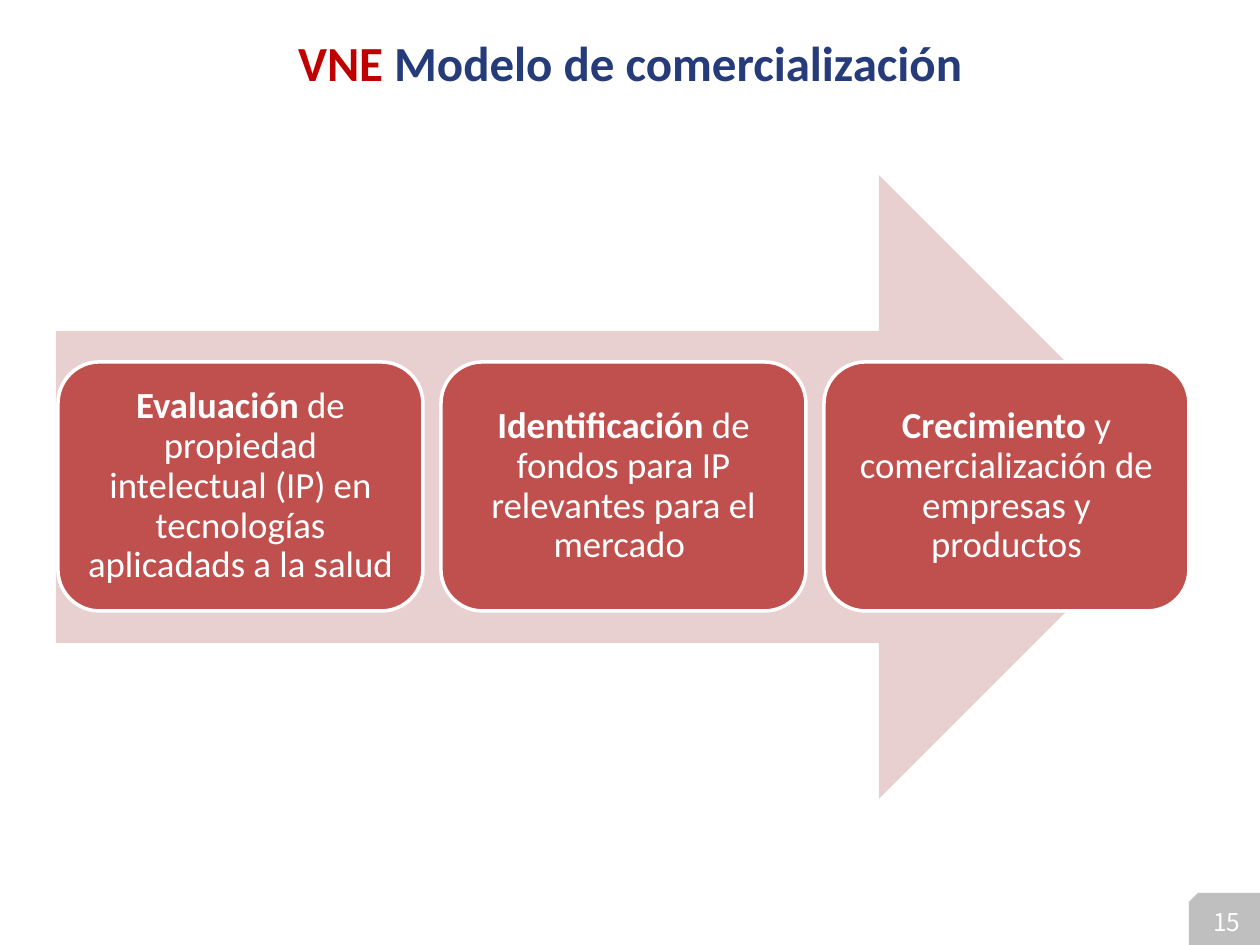
from pptx import Presentation
from pptx.dml.color import RGBColor
from pptx.enum.shapes import MSO_SHAPE
from pptx.enum.text import MSO_ANCHOR, PP_ALIGN
from pptx.util import Pt

ARROW = MSO_SHAPE.RIGHT_ARROW
ROUND = MSO_SHAPE.ROUNDED_RECTANGLE
SNIP = MSO_SHAPE.SNIP_1_RECTANGLE
CENTER = PP_ALIGN.CENTER
MIDDLE = MSO_ANCHOR.MIDDLE

WHITE = "FFFFFF"
STEPS = [
    ("Evaluación ", "de propiedad intelectual (IP) en tecnologías aplicadads a la salud"),
    ("Identificación", " de fondos para IP relevantes para el mercado "),
    ("Crecimiento ", "y comercialización de empresas y productos"),
]
LEFT, TOP, WIDE, HIGH, STEP = 58, 362, 365, 249, 383
PAD = 12


def px(n):
    return round(n * 914400 / 126)


def color(code):
    return RGBColor.from_string(code)


def write(shape, runs, size, font="Calibri", pad=0):
    """Fill a shape with one centred paragraph of (text, colour, bold) runs."""
    frame = shape.text_frame
    form = {"word_wrap": True, "vertical_anchor": MIDDLE}
    for side in ("left", "top", "right", "bottom"):
        form[f"margin_{side}"] = px(pad)
    for name, value in form.items():
        setattr(frame, name, value)
    para = frame.paragraphs[0]
    para.alignment = CENTER
    for text, code, bold in runs:
        run = para.add_run()
        run.text = text
        for name, value in {"name": font, "size": Pt(size), "bold": bold}.items():
            setattr(run.font, name, value)
        run.font.color.rgb = color(code)
    return para


def block(slide, kind, box, fill, line=None):
    shape = slide.shapes.add_shape(kind, *map(px, box))
    shape.shadow.inherit = False
    shape.fill.solid()
    shape.fill.fore_color.rgb = color(fill)
    if line:
        shape.line.color.rgb = color(line)
        shape.line.width = Pt(2)
    else:
        shape.line.fill.background()
    return shape


def head(slide):
    title = slide.shapes.title
    box = {"left": 0, "top": 20, "width": 1260, "height": 84}
    for name, value in box.items():
        setattr(title, name, px(value))
    runs = [("VNE ", "C00000", True), ("Modelo de comercialización", "263B7A", True)]
    write(title, runs, 28)


def page(slide):
    tab = block(slide, SNIP, (1189, 893, 71, 53), "BFBFBF")
    tab.element.spPr.xfrm.set("flipH", "1")
    write(tab, [("15", WHITE, False)], 14, "Noto Sans CJK SC")


def steps(slide):
    for i, (lead, rest) in enumerate(STEPS):
        card = block(slide, ROUND, (LEFT + i * STEP, TOP, WIDE, HIGH), "C0504D", WHITE)
        para = write(card, [(lead, WHITE, True), (rest, WHITE, False)], 21, pad=PAD)
        para.line_spacing = 0.9


def main():
    deck = Presentation()
    deck.slide_width, deck.slide_height = px(1260), px(945)
    slide = deck.slides.add_slide(deck.slide_layouts[5])
    page(slide)
    head(slide)
    block(slide, ARROW, (56, 175, 1135, 624), "E8D0D0")
    steps(slide)
    deck.save("out.pptx")


if __name__ == "__main__":
    main()
